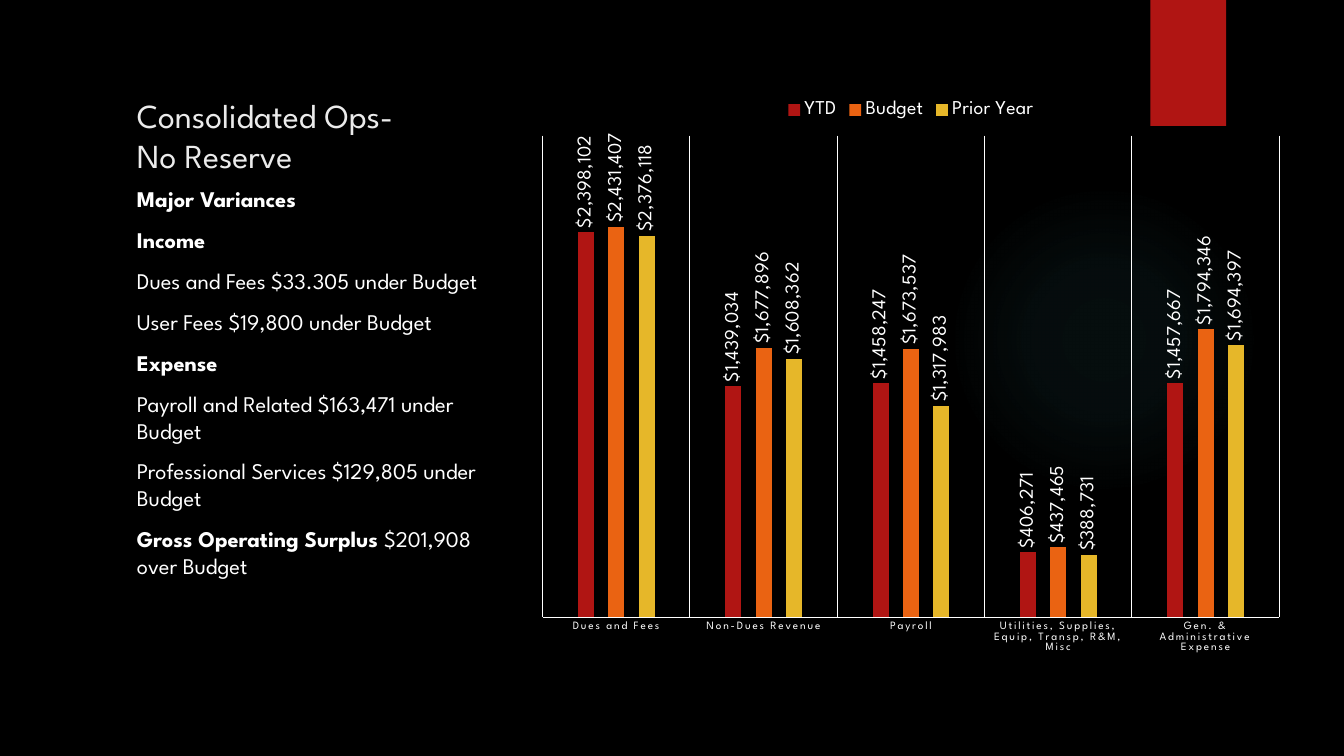
import dataclasses

import lxml.etree
import pptx
import pptx.chart.data
import pptx.dml.color
import pptx.enum.chart
import pptx.enum.shapes
import pptx.enum.text
import pptx.oxml
import pptx.oxml.ns
import pptx.util


@dataclasses.dataclass(frozen=True)
class Theme:
    font: str = "League Spartan"
    background: str = "000000"
    text: str = "FFFFFF"
    title: str = "EBEBEB"
    glow: str = "50B9C1"
    ribbon: str = "B01513"
    series: tuple = ("B01513", "EA6312", "E6B729")
    title_size: int = 24
    body_size: int = 16
    chart_size: int = 14
    category_size: int = 8


THEME = Theme()
WIDTH, HEIGHT = pptx.util.Inches(13.33), pptx.util.Inches(7.5)
CURRENCY = '"$"#,##0'

HEADING = "Consolidated Ops-\vNo Reserve"
VARIANCES = [
    [("Major Variances", True)],
    [("Income", True)],
    [("Dues and Fees $33.305 under Budget", False)],
    [("User Fees $19,800 under Budget", False)],
    [("Expense", True)],
    [("Payroll and Related $163,471 under Budget", False)],
    [("Professional Services $129,805 under Budget", False)],
    [("Gross Operating Surplus ", True), ("$201,908 over Budget", False)],
]
CATEGORIES = [
    "Dues and Fees",
    "Non-Dues Revenue",
    "Payroll",
    "Utilities, Supplies, Equip, Transp, R&M, Misc",
    "Gen. & Administrative Expense",
]
AMOUNTS = {
    "YTD": (2398102, 1439034, 1458247, 406271, 1457667),
    "Budget": (2431407, 1677896, 1673537, 437465, 1794346),
    "Prior Year": (2376118, 1608362, 1317983, 388731, 1694397),
}


def share(left, top, width, height):
    return tuple(
        round(part * whole / 100)
        for part, whole in zip((left, top, width, height), (WIDTH, HEIGHT) * 2)
    )


def rgb(color):
    return pptx.dml.color.RGBColor.from_string(color)


def format_font(font, size, color=THEME.text, bold=False):
    font.name = THEME.font
    font.size = pptx.util.Pt(size)
    font.bold = bold
    font.color.rgb = rgb(color)


def add_text(slide, box, paragraphs, size, color=THEME.text, space_before=0):
    frame = slide.shapes.add_textbox(*box).text_frame
    frame.word_wrap = True
    frame.vertical_anchor = pptx.enum.text.MSO_ANCHOR.TOP
    for index, pieces in enumerate(paragraphs):
        paragraph = frame.add_paragraph() if index else frame.paragraphs[0]
        paragraph.space_before = pptx.util.Pt(space_before if index else 0)
        for words, bold in pieces:
            run_lines = words.split("\v")
            for number, line in enumerate(run_lines):
                if number:
                    paragraph.add_line_break()
                run = paragraph.add_run()
                run.text = line
                format_font(run.font, size, color, bold)


def add_plain_shape(slide, box, preset, color):
    shape = slide.shapes.add_shape(preset, *box)
    shape.shadow.inherit = False
    shape.fill.solid()
    shape.fill.fore_color.rgb = rgb(color)
    shape.line.fill.background()
    return shape


def add_glow(slide, box):
    glow = add_plain_shape(slide, box, pptx.enum.shapes.MSO_SHAPE.OVAL, THEME.glow)
    stops = "".join(
        f'<a:gs pos="{place * 1000}"><a:srgbClr val="{THEME.glow}">'
        f'<a:alpha val="{opacity * 1000}"/></a:srgbClr></a:gs>'
        for place, opacity in ((0, 7), (36, 6), (69, 0), (100, 0))
    )
    gradient = pptx.oxml.parse_xml(
        f'<a:gradFill {pptx.oxml.ns.nsdecls("a")}><a:gsLst>{stops}</a:gsLst>'
        '<a:path path="circle"><a:fillToRect l="50000" t="50000" r="50000" b="50000"/>'
        "</a:path></a:gradFill>"
    )
    properties = glow.element.spPr
    properties.replace(properties.find(pptx.oxml.ns.qn("a:solidFill")), gradient)


def add_backdrop(slide):
    slide.background.fill.solid()
    slide.background.fill.fore_color.rgb = rgb(THEME.background)
    add_glow(slide, share(70.6, 24.4, 23.1, 41.07))
    add_plain_shape(
        slide,
        share(85.6, 0, 5.63, 16.67),
        pptx.enum.shapes.MSO_SHAPE.RECTANGLE,
        THEME.ribbon,
    )


def add_variances(slide, box):
    left, top, width, height = box
    title_height = round(height * 0.158)
    add_text(
        slide,
        (left, top, width, title_height),
        [[(HEADING, False)]],
        THEME.title_size,
        color=THEME.title,
    )
    add_text(
        slide,
        (left, top + title_height, width, height - title_height),
        VARIANCES,
        THEME.body_size,
        space_before=10,
    )


def set_plot_layout(chart, **shares):
    plot_area = chart.element.find(".//" + pptx.oxml.ns.qn("c:plotArea"))
    for old in plot_area.findall(pptx.oxml.ns.qn("c:layout")):
        plot_area.remove(old)
    layout = lxml.etree.Element(pptx.oxml.ns.qn("c:layout"))
    manual = lxml.etree.SubElement(layout, pptx.oxml.ns.qn("c:manualLayout"))
    settings = {"layoutTarget": "inner", "xMode": "edge", "yMode": "edge", **shares}
    for name, value in settings.items():
        lxml.etree.SubElement(manual, pptx.oxml.ns.qn(f"c:{name}"), val=str(value))
    plot_area.insert(0, layout)


def style_axes(chart):
    categories, values = chart.category_axis, chart.value_axis
    no_ticks = pptx.enum.chart.XL_TICK_MARK.NONE
    categories.major_tick_mark = categories.minor_tick_mark = no_ticks
    categories.has_major_gridlines = True
    for line in (categories.format.line, categories.major_gridlines.format.line):
        line.color.rgb = rgb(THEME.text)
        line.width = pptx.util.Pt(0.75)
    format_font(categories.tick_labels.font, THEME.category_size)
    for run_format in categories._element.iter(pptx.oxml.ns.qn("a:defRPr")):
        run_format.set("spc", "120")
    values.has_major_gridlines = False
    values.minimum_scale, values.maximum_scale = 0, 3000000
    values.tick_labels.number_format = CURRENCY
    values.tick_labels.number_format_is_linked = False
    values.visible = False


def style_series(series, color):
    series.format.fill.solid()
    series.format.fill.fore_color.rgb = rgb(color)
    series.invert_if_negative = False
    labels = series.data_labels
    labels.show_value = True
    labels.position = pptx.enum.chart.XL_LABEL_POSITION.OUTSIDE_END
    labels.number_format = CURRENCY
    labels.number_format_is_linked = False
    format_font(labels.font, THEME.chart_size)
    for body in labels._element.iter(pptx.oxml.ns.qn("a:bodyPr")):
        body.set("rot", "-5400000")
        body.set("vert", "horz")


def add_budget_chart(slide, box):
    data = pptx.chart.data.CategoryChartData(number_format=CURRENCY)
    data.categories = CATEGORIES
    for name, amounts in AMOUNTS.items():
        data.add_series(name, amounts)
    kind = pptx.enum.chart.XL_CHART_TYPE.COLUMN_CLUSTERED
    chart = slide.shapes.add_chart(kind, *box, data).chart
    chart.has_title = False
    format_font(chart.font, THEME.chart_size)
    chart.has_legend = True
    chart.legend.position = pptx.enum.chart.XL_LEGEND_POSITION.TOP
    chart.legend.include_in_layout = False
    format_font(chart.legend.font, THEME.chart_size)
    plot = chart.plots[0]
    plot.gap_width, plot.overlap, plot.vary_by_categories = 444, -90, False
    style_axes(chart)
    for series, color in zip(plot.series, THEME.series):
        style_series(series, color)
    set_plot_layout(chart, x=0.02, y=0.08, w=0.96, h=0.84)


def main():
    deck = pptx.Presentation()
    deck.slide_width, deck.slide_height = WIDTH, HEIGHT
    slide = deck.slides.add_slide(deck.slide_layouts[6])
    add_backdrop(slide)
    add_variances(slide, share(9.45, 11.87, 27.9, 76))
    add_budget_chart(slide, share(39.23, 11.87, 57.1, 75.87))
    deck.save("out.pptx")


if __name__ == "__main__":
    main()
